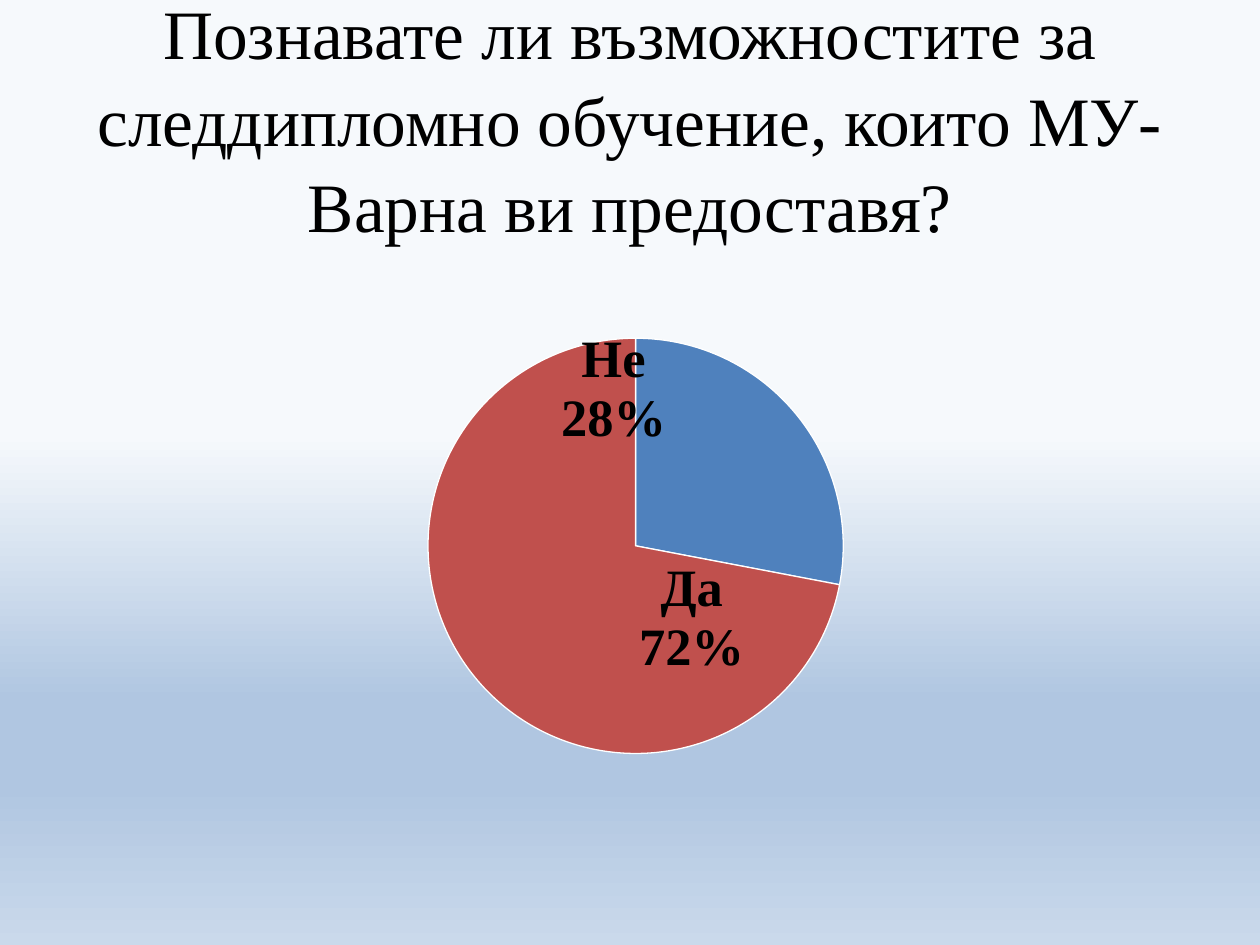
from lxml import etree
from pptx import Presentation
from pptx import util as u
from pptx.chart.data import CategoryChartData
from pptx.dml.color import RGBColor
from pptx.enum import chart as charts, text
from pptx.oxml import ns

PX = u.Inches(1) // 126


def px(length):
    return u.Emu(length * PX)


def color(value):
    return RGBColor.from_string(value)


def manual_layout(**settings):
    layout = etree.Element(ns.qn("c:layout"))
    manual = etree.SubElement(layout, ns.qn("c:manualLayout"))
    for name, value in settings.items():
        etree.SubElement(manual, ns.qn(f"c:{name}"), val=str(value))
    return layout


class SlideBuilder:
    font_name = "Times New Roman"
    ink = "000000"

    def __init__(self, presentation):
        self.slide = presentation.slides.add_slide(presentation.slide_layouts[5])

    def style(self, font, size, bold=False):
        font.name = self.font_name
        font.size = u.Pt(size)
        font.bold = bold
        font.color.rgb = color(self.ink)

    def background(self, stops):
        fill = self.slide.background.fill
        fill.gradient()
        fill.gradient_angle = 270
        stop_list = self.slide._element.xpath("./p:cSld/p:bg//a:gsLst")[0]
        for stop in list(stop_list):
            stop_list.remove(stop)
        for percent, value in stops:
            stop = etree.SubElement(stop_list, ns.qn("a:gs"), pos=str(percent * 1000))
            etree.SubElement(stop, ns.qn("a:srgbClr"), val=value)

    def title(self, content, left, top, width, height):
        shape = self.slide.shapes.title
        shape.left, shape.top, shape.width, shape.height = map(px, (left, top, width, height))
        frame = shape.text_frame
        frame.word_wrap = True
        frame.auto_size = text.MSO_AUTO_SIZE.NONE
        frame.vertical_anchor = text.MSO_ANCHOR.MIDDLE
        paragraph = frame.paragraphs[0]
        paragraph.alignment = text.PP_ALIGN.CENTER
        paragraph.line_spacing = 1.04
        run = paragraph.add_run()
        run.text = content
        self.style(run.font, 39.6)

    def pie(self, slices, left, top, width, height):
        data = CategoryChartData(number_format="General")
        data.categories = [name for name, *_ in slices]
        data.add_series("Series 1", [value for _, value, *_ in slices])
        chart = self.slide.shapes.add_chart(
            charts.XL_CHART_TYPE.PIE, *map(px, (left, top, width, height)), data
        ).chart
        chart.has_legend = False
        chart.has_title = False
        chart.font.name = "Calibri"
        chart.font.size = u.Pt(18)
        chart.font.color.rgb = color(self.ink)
        plot = chart.plots[0]
        plot.vary_by_categories = True
        plot_area = chart._chartSpace.xpath(".//c:plotArea")[0]
        for layout in plot_area.findall(ns.qn("c:layout")):
            plot_area.remove(layout)
        plot_area.insert(0, manual_layout(
            layoutTarget="inner", xMode="edge", yMode="edge",
            x=0.32, y=0.16, w=0.37, h=0.69,
        ))
        series = plot.series[0]
        labels = series.data_labels
        labels.show_value = False
        labels.show_percentage = True
        labels.show_category_name = True
        labels.number_format = "0%"
        labels.number_format_is_linked = False
        self.style(labels.font, 30, True)
        for index, (_, _, fill, offset) in enumerate(slices):
            self.pie_slice(series.points[index], fill, offset)

    def pie_slice(self, point, fill, offset):
        point.format.fill.solid()
        point.format.fill.fore_color.rgb = color(fill)
        point.format.line.color.rgb = color("FFFFFF")
        point.format.line.width = u.Pt(0.75)
        label = point.data_label
        self.style(label.font, 30, True)
        label.position = charts.XL_LABEL_POSITION.CENTER
        index = point._element.xpath(f"./c:dLbls/c:dLbl/c:idx[@val='{point._idx}']")[0]
        index.addnext(manual_layout(x=offset[0], y=offset[1]))
        element = index.getparent()
        for name, value in (("showVal", "0"), ("showCatName", "1"), ("showPercent", "1")):
            element.find(ns.qn(f"c:{name}")).set("val", value)
        etree.SubElement(element, ns.qn("c:separator")).text = "\n"


def main():
    presentation = Presentation()
    presentation.slide_width = px(1260)
    presentation.slide_height = px(945)
    builder = SlideBuilder(presentation)
    builder.background([(0, "F6F9FC"), (46, "F6F9FC"), (74, "B0C6E1"),
                        (83, "B0C6E1"), (100, "CAD9EB")])
    builder.title(
        "Познавате ли възможностите за следдипломно обучение, които МУ-Варна ви предоставя?",
        63, 38, 1134, 158,
    )
    builder.pie([
        ("Не", 28, "4F81BD", (-0.09, -0.15)),
        ("Да", 72, "C0504D", (0.12, 0.01)),
    ], 63, 242, 1134, 602)
    presentation.save("out.pptx")


if __name__ == "__main__":
    main()
